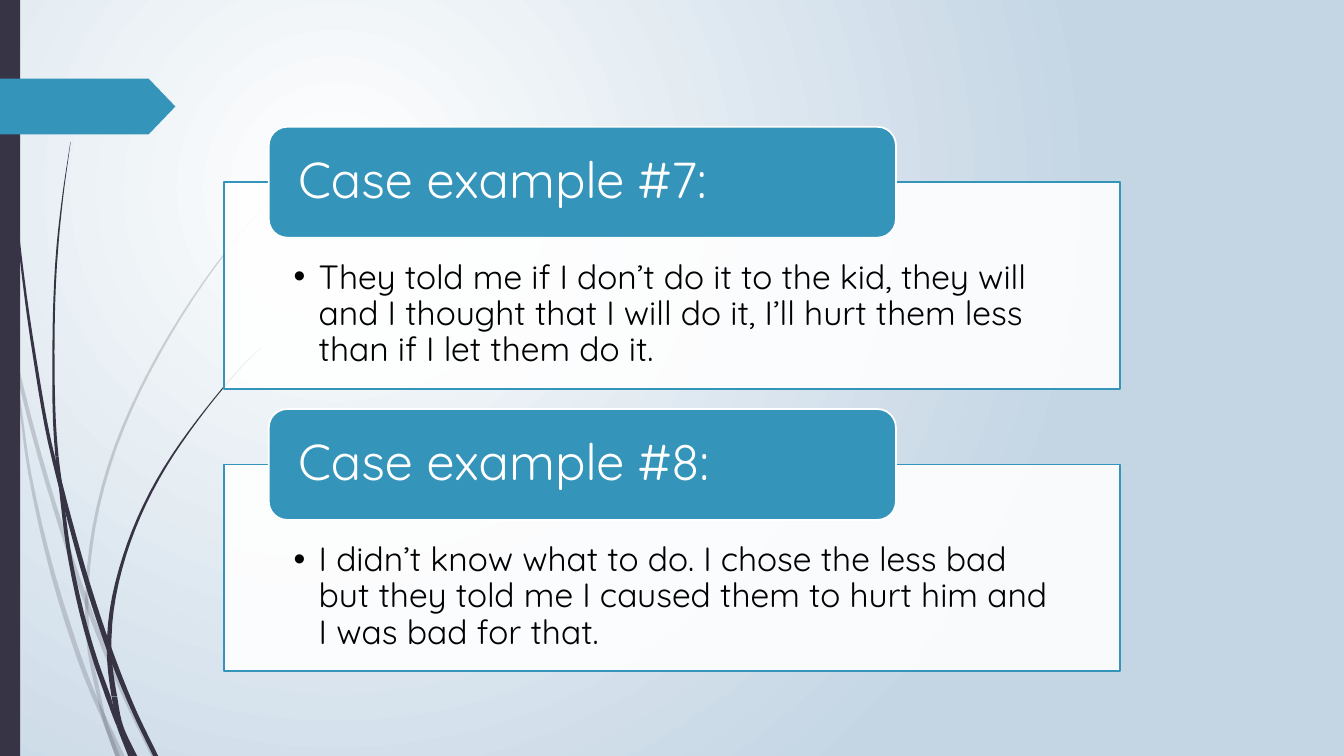
from lxml.etree import SubElement
from pptx import Presentation
from pptx.dml.color import RGBColor
from pptx.enum.shapes import MSO_SHAPE
from pptx.enum.text import MSO_ANCHOR, PP_ALIGN
from pptx.oxml.ns import qn
from pptx.util import Pt

FONT = "Quicksand"
DARK, BLUE, WHITE, BLACK = "373545", "3494BA", "FFFFFF", "000000"
STEPS = 6

# Each stem has (centre x, y, width) stations in points and the stations that part its pieces.
PALE_STEMS = [
    ([(0, 209, 0.4), (1.4, 215, 2.9), (8.8, 248, 2.7), (23, 306, 3), (43, 374.4, 3.2),
      (61.9, 430.6, 3.6), (89.6, 498.2, 3.6), (109.8, 540, 3.6)], (2, 5)),
    ([(7.9, 252, 0), (11.5, 270.7, 1.4), (21.2, 338, 2.2), (48.6, 446, 3.6),
      (67.1, 497, 3.4), (73.8, 512, 3.6), (85.7, 540, 6.6)], (5,)),
    ([(224.6, 110.2, 0.3), (208.5, 126, 0.5), (193, 142, 0.7), (164.5, 176, 1),
      (114.5, 251, 1.8), (78.1, 332.3, 2.2), (62.3, 420.5, 2.2), (62, 436, 2.4),
      (64.1, 465, 2.9), (69.5, 492, 3), (74.5, 513, 2.5), (84, 540, 3.2)],
     (6, 7, 9, 10)),
]
DARK_STEMS = [
    ([(2.5, 0, 0.7), (3.2, 34.6, 0.7), (5.4, 79, 0.8), (13, 167.5, 1.4),
      (24.8, 255.6, 2.2), (38.4, 328, 2.6), (41.6, 340, 3.2), (47.8, 364, 3.2),
      (65.2, 425.5, 3.7), (78.3, 464.4, 3.9), (96.3, 509, 3.4), (111.2, 540, 3.6)],
     (6, 9)),
    ([(50.4, 101.5, 0.2), (45, 139, 0.8), (41, 176.4, 1.3), (38.2, 251, 1.5),
      (40.7, 326, 2.3), (42.8, 343.5, 2.5), (50.4, 400.7, 2.9), (68.8, 473.8, 3.5),
      (77.2, 497.5, 3.8), (84, 518.4, 1.5), (93, 540, 2.9)], (4, 5, 9)),
    ([(187.2, 247.7, 0.3), (176.4, 258, 0.7), (166.3, 269, 0.9), (147.3, 292, 1),
      (113, 342, 1.8), (88.9, 397, 2.2), (78.1, 455, 3.2), (78.1, 467, 3.4),
      (81.7, 497.5, 4), (86, 518.4, 3.8), (95.8, 540, 4.3)], (6, 7, 8, 9)),
]
CASES = [
    ("Case example #7:",
     "They told me if I don’t do it to the kid, they will and I thought that "
     "I will do it, I’ll hurt them less than if I let them do it."),
    ("Case example #8:",
     "I didn’t know what to do. I chose the less bad but they told me I caused "
     "them to hurt him and I was bad for that."),
]


def color(value):
    """Turn a hex string into a colour."""
    return RGBColor.from_string(value)


def paint(shape, fill, opacity=100, line=None):
    """Give a shape its fill, opacity and outline, without a shadow."""
    shape.shadow.inherit = False
    shape.fill.solid()
    shape.fill.fore_color.rgb = color(fill)
    if opacity < 100:
        tint = shape.element.spPr.find(qn("a:solidFill"))[0]
        SubElement(tint, qn("a:alpha"), val=str(opacity * 1000))
    if line:
        shape.line.color.rgb = color(line)
        shape.line.width = Pt(1.25)
    else:
        shape.line.fill.background()


def add_block(page, kind, box, fill, opacity=100, line=None):
    """Add a painted preset shape in a box given in points."""
    shape = page.shapes.add_shape(kind, *[Pt(length) for length in box])
    paint(shape, fill, opacity, line)
    return shape


def write(shape, text, size, ink, anchor, insets):
    """Write one left-aligned paragraph in a shape and return it."""
    frame = shape.text_frame
    frame.word_wrap = True
    frame.vertical_anchor = anchor
    (frame.margin_left, frame.margin_top,
     frame.margin_right, frame.margin_bottom) = [Pt(inset) for inset in insets]
    frame.text = text
    para = frame.paragraphs[0]
    para.alignment = PP_ALIGN.LEFT
    para.line_spacing = 0.9
    for span in para.runs:
        span.font.name = FONT
        span.font.size = Pt(size)
        span.font.color.rgb = color(ink)
    return para


def smooth(stations):
    """Run a smooth curve down through the stations."""
    pairs = list(zip(stations, stations[1:]))
    drops = [end[1] - start[1] for start, end in pairs]
    rates = [(end[0] - start[0]) / drop for (start, end), drop in zip(pairs, drops)]
    inner = [(rates[i] * drops[i + 1] + rates[i + 1] * drops[i]) / (drops[i] + drops[i + 1])
             for i in range(len(rates) - 1)]
    slopes = [rates[0], *inner, rates[-1]]
    curve = []
    for (start, end), drop, rate, first, last in zip(pairs, drops, rates, slopes, slopes[1:]):
        for step in range(STEPS):
            t = step / STEPS
            bend = t * (1 - t) * ((1 - t) * (first - rate) - t * (last - rate))
            x, y, width = [a + t * (b - a) for a, b in zip(start, end)]
            curve.append((x + drop * bend, y, width))
    return curve + [stations[-1]]


def add_stem(page, stations, joints, opacity):
    """Draw a tapering stem in pieces around its centre line."""
    curve = smooth(stations)
    for first, last in zip((0, *joints), (*joints, len(stations) - 1)):
        piece = curve[first * STEPS:last * STEPS + 1]
        left = [(Pt(x - width / 2), Pt(y)) for x, y, width in piece]
        right = [(Pt(x + width / 2), Pt(y)) for x, y, width in piece]
        outline = left + right[::-1]
        builder = page.shapes.build_freeform(*outline[0])
        builder.add_line_segments(outline[1:], close=True)
        paint(builder.convert_to_shape(), DARK, opacity)


def add_background(page):
    """Fill the page with a circular gradient."""
    fill = page.background.fill
    fill.gradient()
    for position, (stop, tint) in enumerate(zip(fill.gradient_stops, (WHITE, "C4D5E4"))):
        stop.color.rgb = color(tint)
        stop.position = position
    gradient = page.element.find(".//" + qn("a:gradFill"))
    gradient.remove(gradient.find(qn("a:lin")))
    circle = SubElement(gradient, qn("a:path"), path="circle")
    SubElement(circle, qn("a:fillToRect"), l="50000", t="50000", r="100000", b="100000")


def add_decoration(page, height):
    """Draw the stems, the side bar and the pointed tab."""
    for stems, opacity in ((PALE_STEMS, 20), (DARK_STEMS, 100)):
        for stations, joints in stems:
            add_stem(page, stations, joints, opacity)
    add_block(page, MSO_SHAPE.RECTANGLE, (0, 0, 14.4, height), DARK)
    tab = add_block(page, MSO_SHAPE.PENTAGON, (0, 56.2, 125.3, 39.8), BLUE)
    tab.adjustments[0] = 0.48


def add_case(page, box, heading, quote):
    """Draw a quote panel with its heading overlapping the top edge."""
    left, top, width, height = box
    panel = add_block(page, MSO_SHAPE.RECTANGLE, box, WHITE, 90, BLUE)
    para = write(panel, quote, 24, BLACK, MSO_ANCHOR.TOP, (49.7, 55.7, 49.7, 13.7))
    para.level = 1
    properties = para._p.get_or_add_pPr()
    properties.set("marL", str(Pt(18)))
    properties.set("indent", str(-Pt(18)))
    SubElement(properties, qn("a:buFont"), typeface="Arial")
    SubElement(properties, qn("a:buChar"), char="•")
    label = add_block(page, MSO_SHAPE.ROUNDED_RECTANGLE,
                      (left + width * 0.05, top - 39.6, width * 0.7, 79.2),
                      BLUE, line=WHITE)
    write(label, heading, 36, WHITE, MSO_ANCHOR.MIDDLE, (17.1, 0, 17.1, 0))


def main():
    """Build the deck and save it."""
    deck = Presentation()
    deck.slide_width, deck.slide_height = Pt(960), Pt(540)
    page = deck.slides.add_slide(deck.slide_layouts[6])
    add_background(page)
    add_decoration(page, 540)
    for index, (heading, quote) in enumerate(CASES):
        add_case(page, (160, 130.2 + index * 201.6, 640, 147.6), heading, quote)
    deck.save("out.pptx")


if __name__ == "__main__":
    main()
